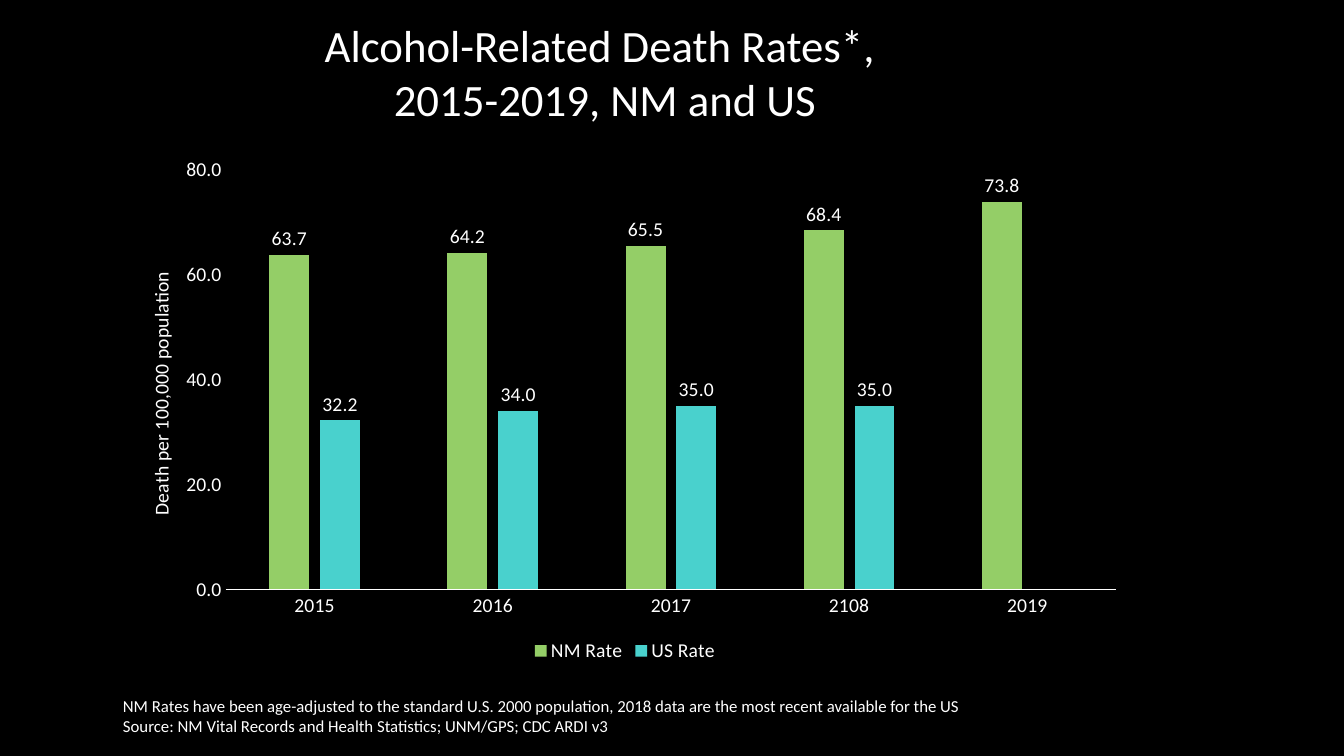
import lxml.etree
import pptx
import pptx.chart.data
import pptx.dml.color
import pptx.enum.chart
import pptx.enum.text
import pptx.oxml.ns
import pptx.util

PX = 12192000 / 1344
FONT = "Calibri"
HUES = {"back": "000000", "text": "FFFFFF", "nm": "94CE67", "us": "49D1CD"}
YEARS = ["2015", "2016", "2017", "2108", "2019"]
RATES = [
    ("NM Rate", "nm", [63.7, 64.2, 65.5, 68.4, 73.8]),
    ("US Rate", "us", [32.2, 34.0, 35.0, 35.0, None]),
]


def px(*nums):
    return [pptx.util.Emu(round(n * PX)) for n in nums]


def hue(name):
    return pptx.dml.color.RGBColor.from_string(HUES[name])


def style(font, size):
    font.name = FONT
    font.size = pptx.util.Pt(size)
    font.bold = False
    font.color.rgb = hue("text")


def add_text(slide, box, lines, size, align):
    frame = slide.shapes.add_textbox(*px(*box)).text_frame
    frame.word_wrap = True
    frame.auto_size = pptx.enum.text.MSO_AUTO_SIZE.SHAPE_TO_FIT_TEXT
    for num, line in enumerate(lines):
        para = frame.add_paragraph() if num else frame.paragraphs[0]
        para.alignment = align
        run = para.add_run()
        run.text = line
        style(run.font, size)


def place(node, **parts):
    """Fix a chart part at fractions of the chart's size."""
    qn = pptx.oxml.ns.qn
    lay = node.find(qn("c:layout"))
    if lay is None:
        lay = lxml.etree.Element(qn("c:layout"))
        node.insert(0, lay)
    man = lxml.etree.SubElement(lay, qn("c:manualLayout"))
    vals = {"xMode": "edge", "yMode": "edge", **parts}
    if "w" in parts:
        vals = {"layoutTarget": "inner", **vals}
    for key, val in vals.items():
        lxml.etree.SubElement(man, qn("c:" + key)).set("val", str(val))


def set_axes(chart):
    none = pptx.enum.chart.XL_TICK_MARK.NONE
    for axis in (chart.category_axis, chart.value_axis):
        axis.major_tick_mark = axis.minor_tick_mark = none
        axis.has_major_gridlines = False
        style(axis.tick_labels.font, 14)

    line = chart.category_axis.format.line
    line.color.rgb = hue("text")
    line.width = pptx.util.Pt(0.75)

    rate = chart.value_axis
    rate.minimum_scale, rate.maximum_scale, rate.major_unit = 0, 80, 20
    rate.tick_labels.number_format = "0.0"
    rate.tick_labels.number_format_is_linked = False
    rate.format.line.fill.background()

    # Upright axis title
    title = rate.axis_title
    run = title.text_frame.paragraphs[0].add_run()
    run.text = "Death per 100,000 population"
    style(run.font, 14)
    body = next(title._element.iter(pptx.oxml.ns.qn("a:bodyPr")))
    body.set("rot", "-5400000")
    body.set("vert", "horz")
    place(title._element, x=0.03, y=0.23)


def add_chart(slide, box):
    data = pptx.chart.data.CategoryChartData(number_format="0.0")
    data.categories = YEARS
    for name, _, vals in RATES:
        data.add_series(name, vals)
    kind = pptx.enum.chart.XL_CHART_TYPE.COLUMN_CLUSTERED
    chart = slide.shapes.add_chart(kind, *px(*box), data).chart
    chart.has_title = False
    style(chart.font, 14)
    set_axes(chart)
    area = next(chart._chartSpace.iter(pptx.oxml.ns.qn("c:plotArea")))
    place(area, x=0.11, y=0.04, w=0.87, h=0.81)

    # Bars and their labels
    plot = chart.plots[0]
    plot.vary_by_categories = False
    plot.gap_width, plot.overlap = 219, -27
    for bars, (_, tone, _) in zip(plot.series, RATES):
        bars.format.fill.solid()
        bars.format.fill.fore_color.rgb = hue(tone)
        tags = bars.data_labels
        tags.show_value = True
        tags.number_format = "0.0"
        tags.number_format_is_linked = False
        tags.position = pptx.enum.chart.XL_LABEL_POSITION.OUTSIDE_END
        style(tags.font, 14)

    # Legend
    chart.has_legend = True
    chart.legend.position = pptx.enum.chart.XL_LEGEND_POSITION.BOTTOM
    chart.legend.include_in_layout = False
    style(chart.legend.font, 14)


def main():
    deck = pptx.Presentation()
    deck.slide_width, deck.slide_height = px(1344, 756)
    slide = deck.slides.add_slide(deck.slide_layouts[6])
    slide.background.fill.solid()
    slide.background.fill.fore_color.rgb = hue("back")
    align = pptx.enum.text.PP_ALIGN

    # Heading
    add_text(slide, (185, 13, 840, 119),
             ["Alcohol-Related Death Rates*, ", "2015-2019, NM and US"],
             32, align.CENTER)
    # Source notes
    add_text(slide, (113, 691, 930, 50),
             ["NM Rates have been age-adjusted to the standard U.S. 2000 "
              "population, 2018 data are the most recent available for the US",
              "Source: NM Vital Records and Health Statistics; UNM/GPS; "
              "CDC ARDI v3"],
             12, align.LEFT)
    # Death rates
    add_chart(slide, (113, 149, 1024, 518))

    deck.save("out.pptx")


if __name__ == "__main__":
    main()
